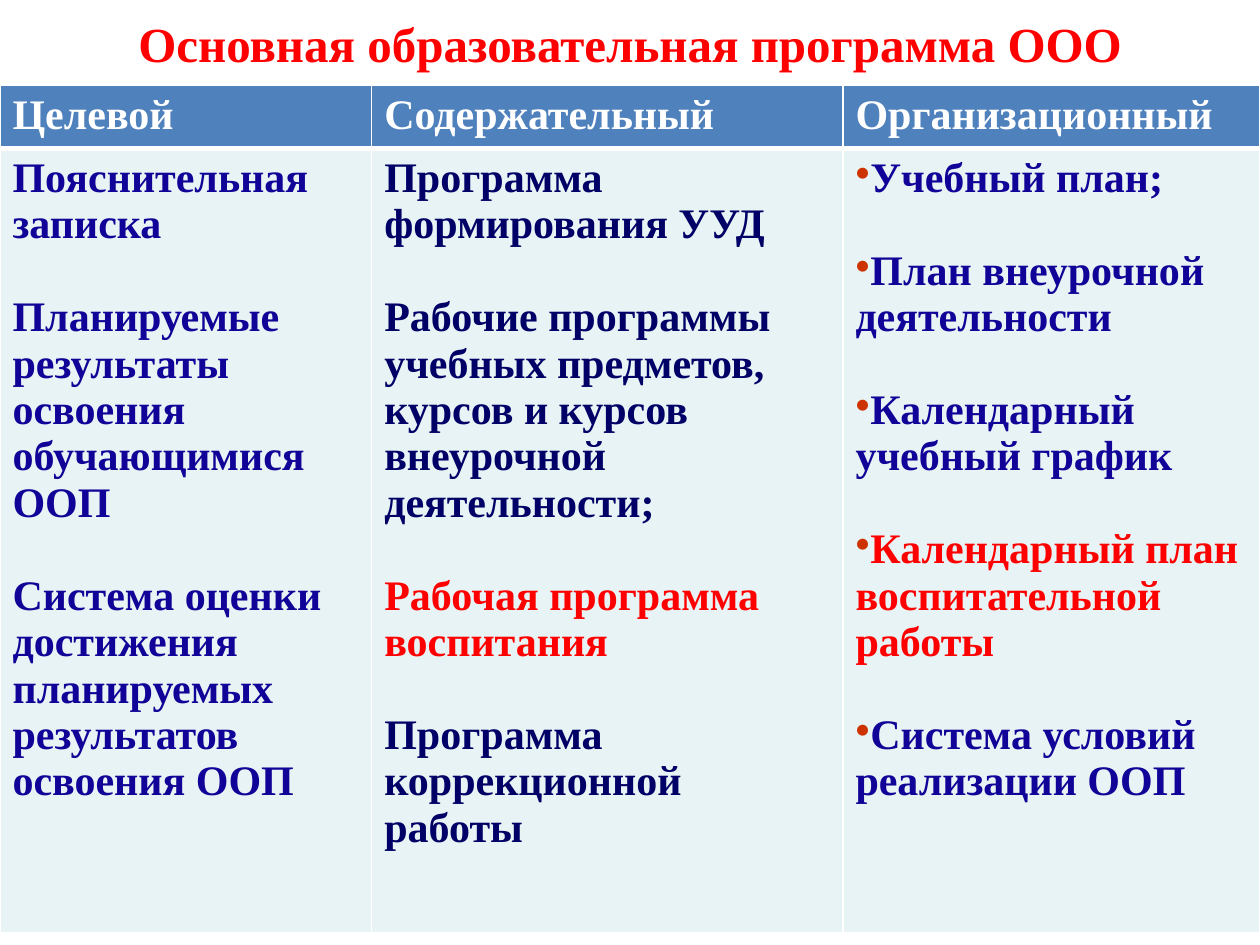
import pptx
import pptx.dml.color
import pptx.enum.text
import pptx.oxml
import pptx.oxml.ns
import pptx.util
from lxml import etree

RGB = pptx.dml.color.RGBColor
RED = RGB(0xFF, 0x00, 0x00)
WHITE = RGB(0xFF, 0xFF, 0xFF)
BLUE = RGB(0x4F, 0x81, 0xBD)
PALE = RGB(0xE7, 0xF3, 0xF4)
INDIGO = RGB(0x11, 0x03, 0x97)
NAVY = RGB(0x00, 0x00, 0x66)
RUST = RGB(0xCC, 0x33, 0x00)

HEADS = ["Целевой", "Содержательный", "Организационный"]
GOALS = [
    ("Пояснительная записка", INDIGO),
    ("Планируемые результаты освоения обучающимися ООП", INDIGO),
    ("Система оценки достижения планируемых результатов освоения ООП", INDIGO),
]
CONTENT = [
    ("Программа формирования УУД", NAVY),
    ("Рабочие программы учебных предметов, курсов и курсов внеурочной деятельности;", NAVY),
    ("Рабочая программа воспитания", RED),
    ("Программа коррекционной работы", NAVY),
]
PLANS = [
    ("Учебный план;", INDIGO),
    ("План внеурочной деятельности", INDIGO),
    ("Календарный учебный график", INDIGO),
    ("Календарный план воспитательной работы", RED),
    ("Система условий реализации ООП", INDIGO),
]


class Deck:
    """Hold the style and the current slide; lengths are shares of the slide."""

    font = "Times New Roman"
    size = 24
    gap = 26.5

    def __init__(self, wide, high):
        self.prs = pptx.Presentation()
        self.prs.slide_width = pptx.util.Inches(wide)
        self.prs.slide_height = pptx.util.Inches(high)
        self.slide = self.prs.slides.add_slide(self.prs.slide_layouts[6])

    def across(self, share):
        return round(self.prs.slide_width * share)

    def down(self, share):
        return round(self.prs.slide_height * share)

    def box(self, left, top, wide, high):
        return self.across(left), self.down(top), self.across(wide), self.down(high)

    def text(self, para, words, color, size):
        run = para.add_run()
        run.text = words
        run.font.name = self.font
        run.font.size = pptx.util.Pt(size)
        run.font.bold = True
        run.font.color.rgb = color

    def title(self, words, area, color, size):
        frame = self.slide.shapes.add_textbox(*self.box(*area)).text_frame
        frame.word_wrap = True
        frame.vertical_anchor = pptx.enum.text.MSO_ANCHOR.MIDDLE
        para = frame.paragraphs[0]
        para.alignment = pptx.enum.text.PP_ALIGN.CENTER
        self.text(para, words, color, size)

    def bullet(self, para, color):
        props = para._p.get_or_add_pPr()
        props.set("marL", "0")
        props.set("indent", "0")
        tint = etree.SubElement(props, pptx.oxml.ns.qn("a:buClr"))
        etree.SubElement(tint, pptx.oxml.ns.qn("a:srgbClr"), val=str(color))
        etree.SubElement(props, pptx.oxml.ns.qn("a:buChar"), char="•")

    def border(self, cell, top, bottom):
        props = cell._tc.get_or_add_tcPr()
        for side, width in zip("LRTB", (1, 1, top, bottom)):
            props.append(pptx.oxml.parse_xml(
                f'<a:ln{side} {pptx.oxml.ns.nsdecls("a")} w="{pptx.util.Pt(width)}">'
                f'<a:solidFill><a:srgbClr val="{WHITE}"/></a:solidFill></a:ln{side}>'))

    def cell(self, cell, items, fill, top, bottom, mark=None):
        self.border(cell, top, bottom)
        cell.fill.solid()
        cell.fill.fore_color.rgb = fill
        frame = cell.text_frame
        for i, (words, color) in enumerate(items):
            para = frame.add_paragraph() if i else frame.paragraphs[0]
            if i:
                para.space_before = pptx.util.Pt(self.gap)
            if mark:
                self.bullet(para, mark)
            self.text(para, words, color, self.size)

    def table(self, area, cols, rows, heads, lists, marks):
        shape = self.slide.shapes.add_table(len(rows), len(cols), *self.box(*area))
        grid = shape.table
        for row, share in zip(grid.rows, rows):
            row.height = self.down(share)
        for i, share in enumerate(cols):
            grid.columns[i].width = self.across(share)
            self.cell(grid.cell(0, i), [(heads[i], WHITE)], BLUE, 1, 3)
            self.cell(grid.cell(1, i), lists[i], PALE, 3, 1, marks[i])


def main():
    deck = Deck(10, 7.5)
    rows = [0.48 / 7.5, 6.22 / 7.5]
    top = 0.68 / 7.5
    deck.title("Основная образовательная программа ООО", (0.05, 0, 0.9, top), RED, 28)
    deck.table((0, top, 1, sum(rows)), [0.295, 0.374, 0.331], rows,
               HEADS, [GOALS, CONTENT, PLANS], [None, None, RUST])
    deck.prs.save("out.pptx")


if __name__ == "__main__":
    main()
